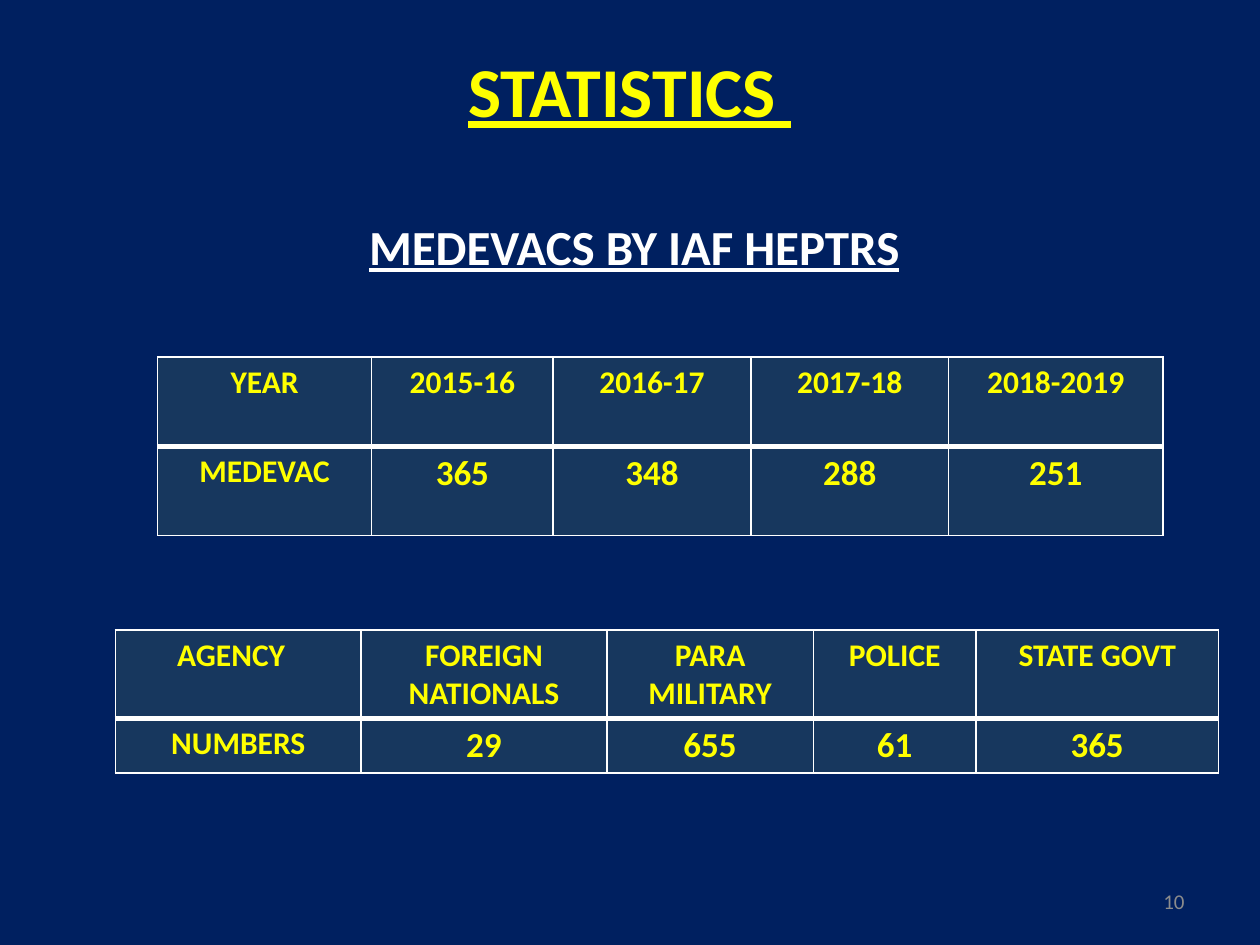
from pptx import Presentation
from pptx.dml.color import RGBColor
from pptx.enum.text import MSO_ANCHOR as Anchor, PP_ALIGN as Align
from pptx.oxml import parse_xml
from pptx.oxml.ns import nsdecls
from pptx.util import Pt

COLORS = {
    "background": "002060",
    "accent": "FFFF00",
    "cell": "17375E",
    "white": "FFFFFF",
    "number": "8C8C8C",
}


def rgb(name):
    return RGBColor.from_string(COLORS[name])


def style(para, size, color, bold=True, underline=None, align=Align.CENTER):
    para.alignment = align
    font = para.font
    font.name, font.size = "Calibri", Pt(size)
    font.bold, font.underline = bold, underline
    font.color.rgb = rgb(color)


def place(shape, left, top, width, height):
    shape.left, shape.top = Pt(left), Pt(top)
    shape.width, shape.height = Pt(width), Pt(height)


def add_title(page, text):
    title = page.shapes.title
    place(title, 36, 6, 648, 90)
    title.text_frame.vertical_anchor = Anchor.MIDDLE
    title.text_frame.text = text
    style(title.text_frame.paragraphs[0], 40, "accent", underline=True)


def add_label(page, text, area, size, color, wrap=True, anchor=Anchor.TOP, **look):
    box = page.shapes.add_textbox(*map(Pt, area))
    frame = box.text_frame
    frame.word_wrap, frame.vertical_anchor = wrap, anchor
    frame.text = text
    style(frame.paragraphs[0], size, color, **look)


def set_borders(cell, widths):
    """Draw white borders; widths maps L, R, T, B to points, in that order."""
    properties = cell._tc.get_or_add_tcPr()
    for index, (side, width) in enumerate(widths.items()):
        line = parse_xml(
            f'<a:ln{side} {nsdecls("a")} w="{Pt(width)}"><a:solidFill>'
            f'<a:srgbClr val="{COLORS["white"]}"/></a:solidFill></a:ln{side}>'
        )
        properties.insert(index, line)


def add_grid(page, left, top, widths, heights, rows):
    frame = page.shapes.add_table(
        len(rows), len(widths), Pt(left), Pt(top), Pt(sum(widths)), Pt(sum(heights))
    )
    table = frame.table
    for column, width in zip(table.columns, widths):
        column.width = Pt(width)
    for row, height in zip(table.rows, heights):
        row.height = Pt(height)
    for r, texts in enumerate(rows):
        for c, text in enumerate(texts):
            cell = table.cell(r, c)
            cell.text = text
            cell.fill.solid()
            cell.fill.fore_color.rgb = rgb("cell")
            is_value = r > 0 and c > 0
            style(cell.text_frame.paragraphs[0], 20 if is_value else 18, "accent")
            # The rule under the header row is thicker
            set_borders(cell, {"L": 1, "R": 1, "T": 3 if r else 1, "B": 1 if r else 3})


def main():
    deck = Presentation()
    deck.slide_width, deck.slide_height = Pt(720), Pt(540)
    page = deck.slides.add_slide(deck.slide_layouts[5])
    page.background.fill.solid()
    page.background.fill.fore_color.rgb = rgb("background")

    # Headings
    add_title(page, "STATISTICS ")
    add_label(page, "MEDEVACS BY IAF HEPTRS", (203.8, 120, 321, 41), 28, "white",
              wrap=False, underline=True, align=Align.LEFT)

    # Evacuations by year
    add_grid(page, 90, 204, [122.4, 103.7, 113, 113, 122.4], [51, 51], [
        ["YEAR", "2015-16", "2016-17", "2017-18", "2018-2019"],
        ["MEDEVAC", "365", "348", "288", "251"],
    ])

    # Evacuations by agency
    add_grid(page, 66, 360, [140.4, 140.4, 118, 93, 138.5], [48, 30], [
        ["AGENCY  ", "FOREIGN NATIONALS", "PARA MILITARY", "POLICE", "STATE GOVT"],
        ["NUMBERS", "29", "655", "61", "365"],
    ])

    # Page number
    add_label(page, "10", (516, 500.5, 168, 28.8), 12, "number",
              anchor=Anchor.MIDDLE, bold=False, align=Align.RIGHT)

    deck.save("out.pptx")


if __name__ == "__main__":
    main()
